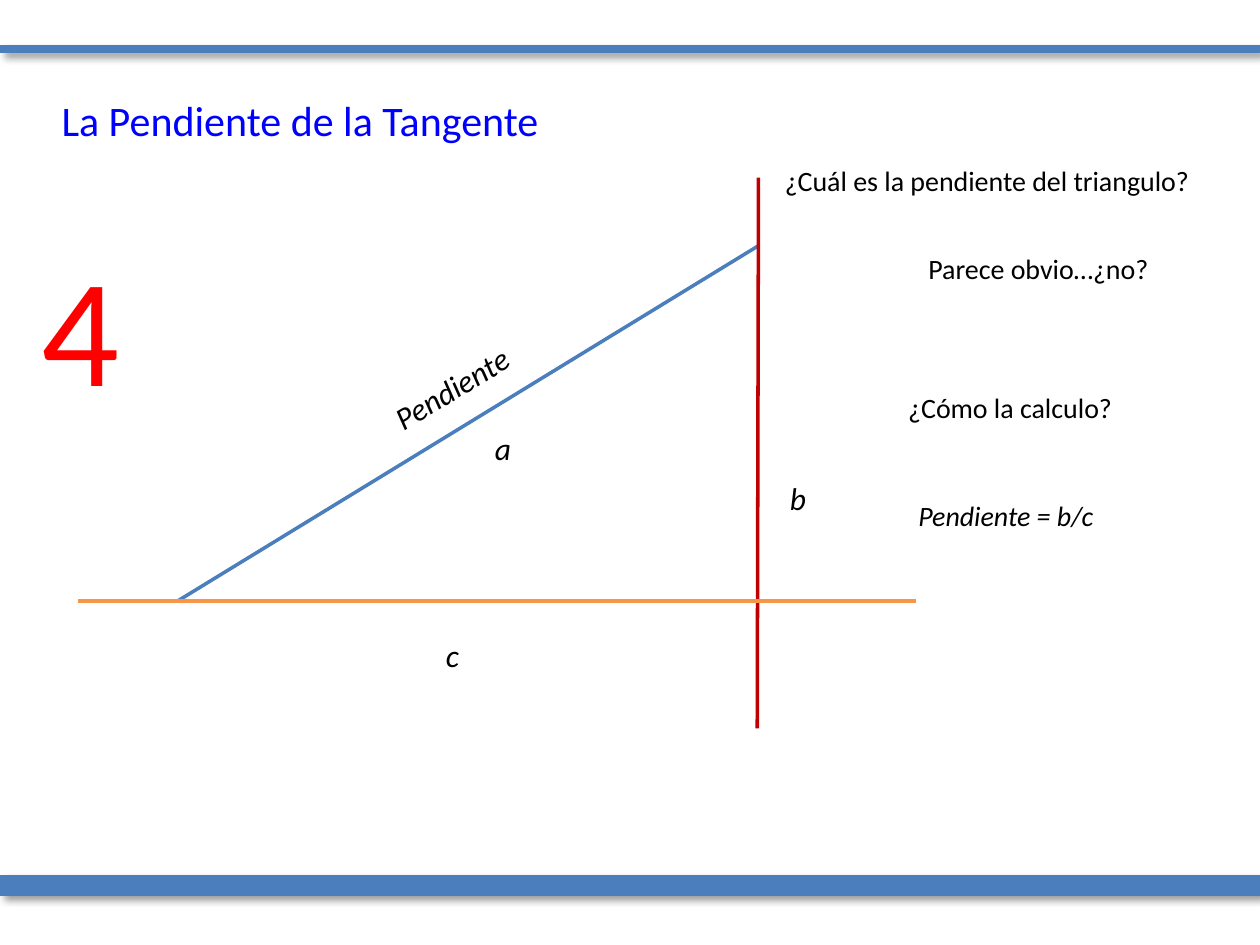
"""Build a slide that explains the slope of a tangent with a triangle."""
import dataclasses

import lxml.etree
import pptx
import pptx.dml.color
import pptx.enum.shapes
import pptx.enum.text
import pptx.oxml.ns
import pptx.util

Inches = pptx.util.Inches


@dataclasses.dataclass(frozen=True)
class Theme:
    """Hold the colours, type sizes and font of the slide."""
    font: str = "Calibri"
    blue: str = "4B7EBC"
    red: str = "C00000"
    orange: str = "F79646"
    title: str = "0000FF"
    number: str = "FF0000"
    text: str = "000000"
    title_size: int = 24
    label_size: int = 18
    body_size: int = 16
    number_size: int = 88
    line_width: int = 2


THEME = Theme()


def set_attributes(target, values):
    """Set each named value on the target."""
    for name, value in values.items():
        setattr(target, name, value)


def add_line(slide, start, end, color, width=THEME.line_width):
    """Draw a straight line without shadow and return it."""
    line = slide.shapes.add_connector(
        pptx.enum.shapes.MSO_CONNECTOR.STRAIGHT, *map(Inches, (*start, *end)))
    line.line.color.rgb = pptx.dml.color.RGBColor.from_string(color)
    line.line.width = pptx.util.Pt(width)
    lxml.etree.SubElement(line._element.spPr, pptx.oxml.ns.qn("a:effectLst"))
    return line


def add_band(slide, top, width):
    """Draw a full-width band with a soft shadow."""
    band = add_line(slide, (0, top), (10, top), THEME.blue, width)
    qn = pptx.oxml.ns.qn
    effects = band._element.spPr.find(qn("a:effectLst"))
    shadow = lxml.etree.SubElement(
        effects, qn("a:outerShdw"), blurRad=str(pptx.util.Pt(4)),
        dist=str(pptx.util.Pt(3)), dir=str(45 * 60000), rotWithShape="0")
    color = lxml.etree.SubElement(shadow, qn("a:srgbClr"), val=THEME.text)
    lxml.etree.SubElement(color, qn("a:alpha"), val="40000")


def add_text(slide, text, box, size, color=THEME.text, italic=False, rotation=0):
    """Add one line of text in a box given in inches."""
    shape = slide.shapes.add_textbox(*map(Inches, box))
    shape.rotation = rotation
    set_attributes(shape.text_frame, {
        "word_wrap": False,
        "auto_size": pptx.enum.text.MSO_AUTO_SIZE.SHAPE_TO_FIT_TEXT,
    })
    run = shape.text_frame.paragraphs[0].add_run()
    run.text = text
    set_attributes(run.font, {
        "name": THEME.font, "size": pptx.util.Pt(size), "italic": italic})
    run.font.color.rgb = pptx.dml.color.RGBColor.from_string(color)


def add_triangle(slide):
    """Draw the slope, the height and the base with their labels."""
    add_line(slide, (1.41, 4.77), (6.02, 1.95), THEME.blue)
    add_line(slide, (6.02, 1.41), (6.01, 5.78), THEME.red)
    add_line(slide, (0.62, 4.77), (7.27, 4.77), THEME.orange)
    for text, left, top, width, rotation in (
            ("a", 3.83, 3.36, 0.33, 0),
            ("b", 6.17, 3.75, 0.33, 0),
            ("c", 3.44, 5, 0.31, 0),
            ("Pendiente", 2.98, 2.87, 1.24, 329)):
        add_text(slide, text, (left, top, width, 0.4), THEME.label_size,
                 italic=True, rotation=rotation)


def add_questions(slide):
    """Add the questions and the formula on the right."""
    for text, left, top, width, italic in (
            ("¿Cuál es la pendiente del triangulo?", 6.13, 1.25, 3.45, False),
            ("Parece obvio…¿no?", 7.27, 1.95, 1.97, False),
            ("¿Cómo la calculo?", 7.11, 3.05, 1.84, False),
            ("Pendiente = b/c", 7.19, 3.91, 1.61, True)):
        add_text(slide, text, (left, top, width, 0.37), THEME.body_size,
                 italic=italic)


def main():
    """Build and save the presentation."""
    presentation = pptx.Presentation()
    set_attributes(presentation, {
        "slide_width": Inches(10), "slide_height": Inches(7.5)})
    slide = presentation.slides.add_slide(presentation.slide_layouts[6])
    add_band(slide, 0.39, 5)
    add_band(slide, 7.03, 12)
    add_text(slide, "La Pendiente de la Tangente", (0.39, 0.7, 4.03, 0.5),
             THEME.title_size, THEME.title)
    add_triangle(slide)
    add_questions(slide)
    add_text(slide, "4", (0.23, 1.8, 0.83, 1.58),
             THEME.number_size, THEME.number)
    presentation.save("out.pptx")


if __name__ == "__main__":
    main()
